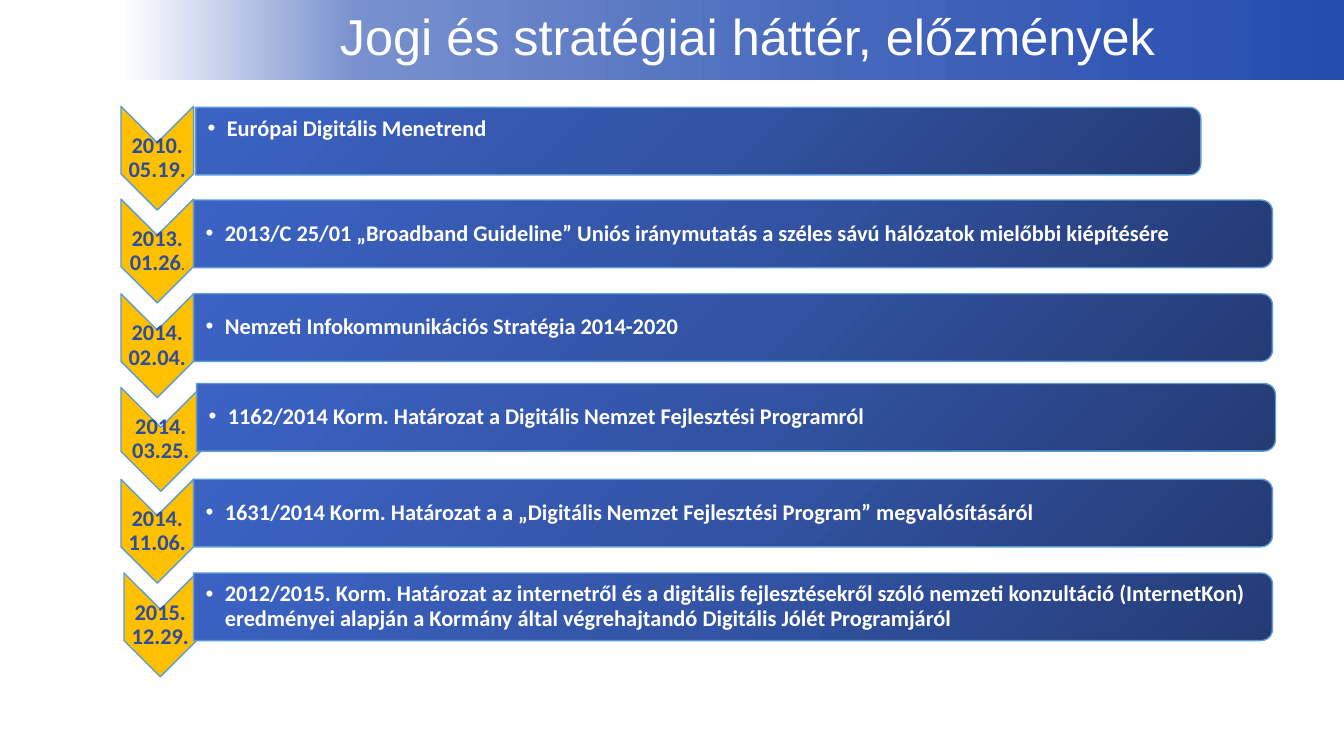
from pptx import Presentation
from pptx.dml.color import RGBColor
from pptx.enum.shapes import MSO_SHAPE
from pptx.enum.text import MSO_ANCHOR, PP_ALIGN
from pptx.oxml import parse_xml
from pptx.oxml.ns import nsdecls, qn
from pptx.util import Emu, Pt

PX = 9144
THEME = {
    "line": "5B9BD5",
    "chevron": [(0, "FFC000")],
    "banner": [(0, "FFFFFF"), (19, "7891CE"), (60, "4567BB"), (100, "244BAE")],
    "bar": [(0, "243B74"), (50, "3354A5"), (100, "3C63C4")],
    "title": {"name": "Arial", "size": Pt(36), "color": "FFFFFF"},
    "date": {"name": "Calibri", "size": Pt(16), "bold": True, "color": "2E4D9B"},
    "item": {"name": "Calibri", "size": Pt(16), "bold": True, "color": "FFFFFF"},
    "small_dot": Pt(10),
}

BAR_HEIGHT = 67
CHEVRON_HEIGHT = 103
DATE_HEIGHT = 31
ITEM_HEIGHT = 61

ROWS = [
    {"date": "2010.\v05.19.", "item": "Európai Digitális Menetrend",
     "chevron": (120, 157, 72), "bar": (194, 140, 997), "lift": 12},
    {"date": "2013.\v01.26", "dot": ".",
     "item": "2013/C 25/01 „Broadband Guideline” Uniós iránymutatás a széles sávú hálózatok mielőbbi kiépítésére",
     "chevron": (120, 249, 72), "bar": (192, 232, 1070)},
    {"date": "2014.\v02.04.", "item": "Nemzeti Infokommunikációs Stratégia 2014-2020",
     "chevron": (120, 343, 72), "bar": (192, 325, 1070)},
    {"date": "2014.\v03.25.", "item": "1162/2014 Korm. Határozat a Digitális Nemzet Fejlesztési Programról",
     "chevron": (120, 436, 79), "bar": (195, 414, 1070)},
    {"date": "2014.\v11.06.",
     "item": "1631/2014 Korm. Határozat a a „Digitális Nemzet Fejlesztési Program” megvalósításáról",
     "chevron": (120, 527, 72), "bar": (192, 509, 1070)},
    {"date": "2015.\v12.29.",
     "item": "2012/2015. Korm. Határozat az internetről és a digitális fejlesztésekről szóló nemzeti konzultáció "
             "(InternetKon) eredményei alapján a Kormány által végrehajtandó Digitális Jólét Programjáról",
     "chevron": (123, 620, 72), "bar": (192, 602, 1070)},
]

presentation = Presentation()
presentation.slide_width = Emu(1333 * PX)
presentation.slide_height = Emu(750 * PX)
slide = presentation.slides.add_slide(presentation.slide_layouts[6])


def add_figure(kind, left, middle, width, height, stops, angle=0, turned=False):
    across, down = (height, width) if turned else (width, height)
    center = left + width / 2
    box = (center - across / 2, middle - down / 2, across, down)
    shape = slide.shapes.add_shape(kind, *(Emu(round(length * PX)) for length in box))
    shape.shadow.inherit = False
    shape.rotation = 90 if turned else 0
    if len(stops) == 1:
        shape.fill.solid()
        shape.fill.fore_color.rgb = RGBColor.from_string(stops[0][1])
    else:
        shape.fill.gradient()
        properties = shape._element.spPr
        marks = "".join(f'<a:gs pos="{place * 1000}"><a:srgbClr val="{color}"/></a:gs>' for place, color in stops)
        gradient = parse_xml(f'<a:gradFill {nsdecls("a")} rotWithShape="1"><a:gsLst>{marks}</a:gsLst>'
                             f'<a:lin ang="{angle * 60000}" scaled="0"/></a:gradFill>')
        properties.replace(properties.find(qn("a:gradFill")), gradient)
    return shape


def add_text(text, left, middle, width, height, font_format, insets, align):
    box = (left, middle - height / 2, width, height)
    frame = slide.shapes.add_textbox(*(Emu(round(length * PX)) for length in box)).text_frame
    frame.word_wrap = True
    frame.vertical_anchor = MSO_ANCHOR.MIDDLE
    for side, inset in zip(("left", "top", "right", "bottom"), insets):
        setattr(frame, f"margin_{side}", Emu(inset * PX))
    paragraph = frame.paragraphs[0]
    paragraph.text = text
    paragraph.alignment = align
    paragraph.line_spacing = 0.9
    if align == PP_ALIGN.LEFT:
        properties = paragraph._p.get_or_add_pPr()
        properties.set("marL", str(19 * PX))
        properties.set("indent", str(-19 * PX))
        properties.append(parse_xml(f'<a:buFont {nsdecls("a")} typeface="Arial"/>'))
        properties.append(parse_xml(f'<a:buChar {nsdecls("a")} char="•"/>'))
    for name, value in font_format.items():
        if name == "color":
            paragraph.font.color.rgb = RGBColor.from_string(value)
        else:
            setattr(paragraph.font, name, value)
    for run in paragraph.runs:
        for name, value in font_format.items():
            if name == "color":
                run.font.color.rgb = RGBColor.from_string(value)
            else:
                setattr(run.font, name, value)
    return paragraph


banner = add_figure(MSO_SHAPE.RECTANGLE, 122, 39.5, 1211, 79, THEME["banner"])
banner.line.fill.background()
add_text("Jogi és stratégiai háttér, előzmények", 150, 38.5, 1183, 77,
         THEME["title"], (10, 5, 10, 5), PP_ALIGN.CENTER)

for row in ROWS:
    left, middle, width = row["chevron"]
    chevron = add_figure(MSO_SHAPE.CHEVRON, left, middle, width, CHEVRON_HEIGHT, THEME["chevron"], turned=True)
    date = add_text(row["date"], left, middle, width, DATE_HEIGHT, THEME["date"], (1, 1, 1, 1), PP_ALIGN.CENTER)
    if "dot" in row:
        dot = date.add_run()
        dot.text = row["dot"]
        dot.font.size = THEME["small_dot"]

    left, middle, width = row["bar"]
    bar = add_figure(MSO_SHAPE.ROUND_2_SAME_RECTANGLE, left, middle, width, BAR_HEIGHT,
                     THEME["bar"], angle=135, turned=True)
    add_text(row["item"], left, middle - row.get("lift", 0), width - 3, ITEM_HEIGHT,
             THEME["item"], (12, 1, 1, 1), PP_ALIGN.LEFT)

    for shape in (chevron, bar):
        shape.line.color.rgb = RGBColor.from_string(THEME["line"])
        shape.line.width = Pt(1)

presentation.save("out.pptx")
